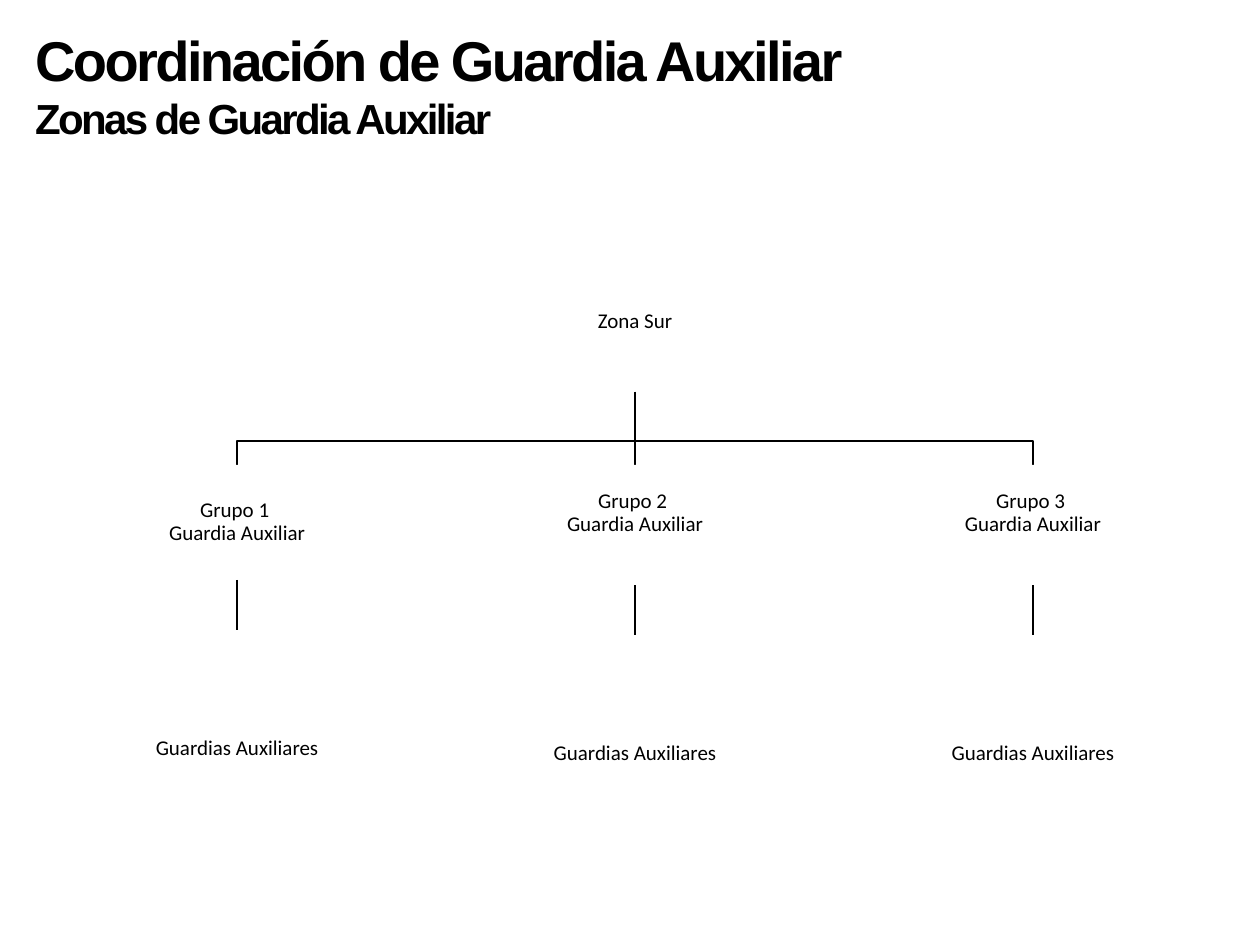
from collections import namedtuple

from lxml import etree
from pptx import Presentation
from pptx.dml.color import RGBColor
from pptx.enum import shapes, text
from pptx.oxml import ns
from pptx.util import Pt

BLACK = RGBColor(0, 0, 0)
WHITE = RGBColor(255, 255, 255)
INSET = 0.72
EMPTY_LINE = 13.2

Box = namedtuple("Box", "left top width height")


def add_text(slide, box, lines, *, sizes=(12,), font="Calibri", bold=False,
             spacing=None, align=text.PP_ALIGN.CENTER, line_spacing=0.9,
             anchor=text.MSO_ANCHOR.MIDDLE, insets=(INSET,) * 4, fill=None):
    shape = slide.shapes.add_textbox(*(Pt(value) for value in box))
    if fill is not None:
        shape.fill.solid()
        shape.fill.fore_color.rgb = fill
    frame = shape.text_frame
    frame.word_wrap = True
    frame.vertical_anchor = anchor
    frame.margin_left, frame.margin_top, frame.margin_right, frame.margin_bottom = (
        Pt(value) for value in insets)
    for index, line in enumerate(lines):
        paragraph = frame.paragraphs[0] if index == 0 else frame.add_paragraph()
        paragraph.alignment = align
        paragraph.line_spacing = line_spacing
        run = paragraph.add_run()
        run.text = line
        run.font.name = font
        run.font.size = Pt(sizes[min(index, len(sizes) - 1)])
        run.font.bold = bold
        run.font.color.rgb = BLACK
        if spacing is not None:
            run._r.get_or_add_rPr().set("spc", str(round(spacing * 100)))
    return shape


def style_line(shape):
    shape.line.color.rgb = BLACK
    shape.line.width = Pt(1)


def add_vertical(slide, x, top, bottom):
    connector = slide.shapes.add_connector(
        shapes.MSO_CONNECTOR.STRAIGHT, Pt(x), Pt(top), Pt(x), Pt(bottom))
    style_line(connector)
    etree.SubElement(connector._element.spPr, ns.qn("a:effectLst"))


def add_elbow(slide, start_x, end_x, top, bend, bottom):
    builder = slide.shapes.build_freeform(Pt(start_x), Pt(top))
    builder.add_line_segments(
        [(Pt(x), Pt(y)) for x, y in ((start_x, bend), (end_x, bend), (end_x, bottom))],
        close=False)
    shape = builder.convert_to_shape()
    shape.shadow.inherit = False
    shape.fill.background()
    style_line(shape)


def add_title(slide, box):
    add_text(slide, box, ["Coordinación de Guardia Auxiliar", "Zonas de Guardia Auxiliar"],
             sizes=(32, 24), font="Arial", bold=True, spacing=-1.5,
             align=text.PP_ALIGN.LEFT, line_spacing=1.0,
             anchor=text.MSO_ANCHOR.TOP, insets=(7.2, 3.6, 7.2, 3.6))


def add_group(slide, box, number, group_height, bottom_inset):
    gap = 28.5
    center = box.left + box.width / 2
    group_bottom = box.top + group_height
    members_top = group_bottom + gap
    add_text(slide, Box(box.left, box.top, box.width, group_height),
             [f"Grupo {number} ", "Guardia Auxiliar"], fill=WHITE,
             insets=(INSET, INSET, INSET, bottom_inset))
    add_text(slide, Box(box.left, members_top, box.width, box.top + box.height - members_top),
             ["Guardias Auxiliares"], fill=WHITE)
    add_vertical(slide, center, group_bottom, members_top)


def add_zone_chart(slide, box):
    group_width, group_step = 198.5, 227.4
    zone_height, bend_offset, group_offset = 80, 108, 121.7
    middle = box.left + box.width / 2
    zone_bottom = box.top + zone_height
    group_top = box.top + group_offset
    add_text(slide, Box(middle - 89, box.top, 178, zone_height), ["Zona Sur"])
    for number in (1, 2, 3):
        center = middle + (number - 2) * group_step
        if number == 2:
            add_vertical(slide, center, zone_bottom, group_top)
        else:
            add_elbow(slide, middle, center, zone_bottom, box.top + bend_offset, group_top)
        first = number == 1
        group_height = 65.7 if first else 68.7
        group_box = Box(center - group_width / 2, group_top, group_width, group_height + 164.5)
        add_group(slide, group_box, number, group_height,
                  INSET if first else INSET + EMPTY_LINE)


def main():
    presentation = Presentation()
    presentation.slide_width = Pt(720)
    presentation.slide_height = Pt(540)
    slide = presentation.slides.add_slide(presentation.slide_layouts[6])
    add_zone_chart(slide, Box(36.3, 144, 653.2, 355))
    add_title(slide, Box(13, 11, 537, 75))
    presentation.save("out.pptx")


if __name__ == "__main__":
    main()
